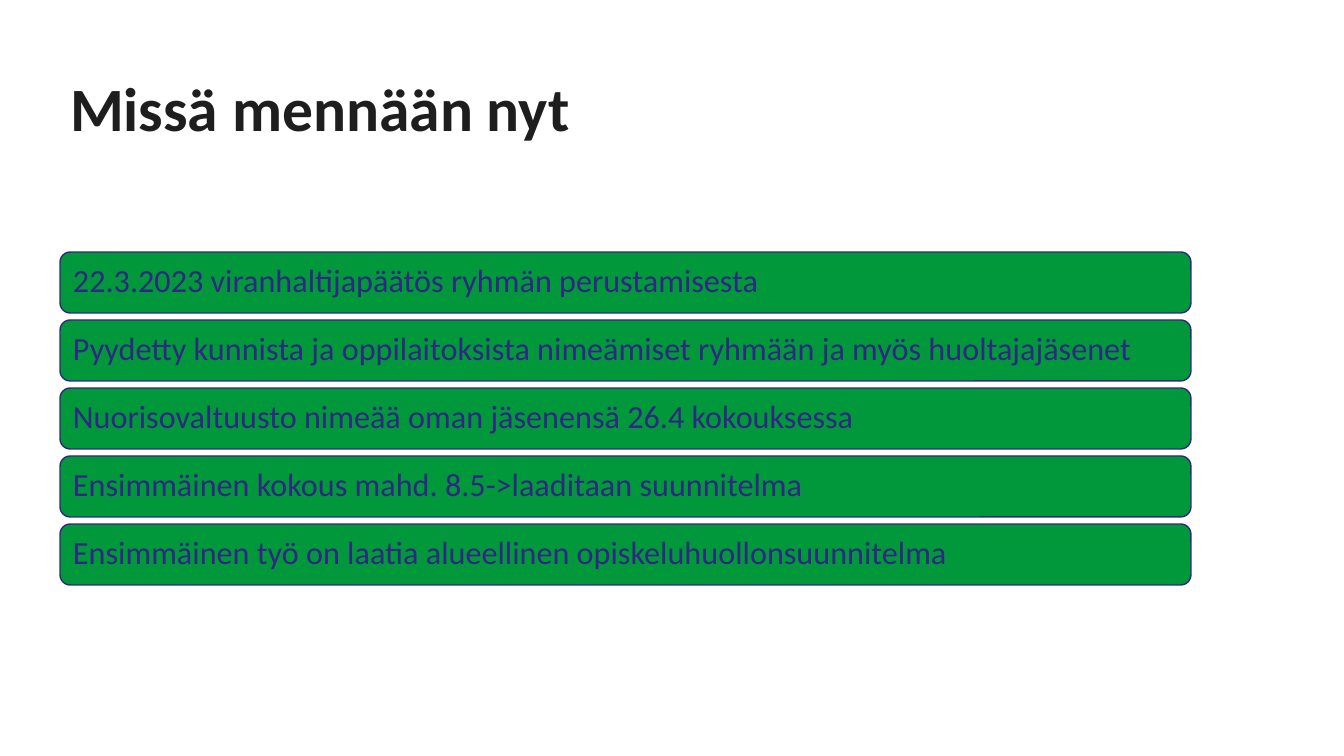
from pptx import Presentation
from pptx.dml.color import RGBColor
from pptx.enum.shapes import MSO_SHAPE
from pptx.enum.text import MSO_ANCHOR, PP_ALIGN
from pptx.util import Pt

PX = 914400 / 100.8
COLORS = {"title": "1E1E1E", "bar": "00983A", "ink": "302783"}
STEPS = [
    "22.3.2023 viranhaltijapäätös ryhmän perustamisesta",
    "Pyydetty kunnista ja oppilaitoksista nimeämiset ryhmään ja myös huoltajajäsenet",
    "Nuorisovaltuusto nimeää oman jäsenensä 26.4 kokouksessa",
    "Ensimmäinen kokous mahd. 8.5->laaditaan suunnitelma",
    "Ensimmäinen työ on laatia alueellinen opiskeluhuollonsuunnitelma",
]
LEFT, WIDTH = 60, 1131
BAR_TOP, BAR_HEIGHT, BAR_PITCH = 252, 61, 68


def px(n):
    return round(n * PX)


def write(sp, text, size, color, anchor, bold=False):
    tf = sp.text_frame
    tf.word_wrap = True
    tf.vertical_anchor = anchor
    tf.margin_left = tf.margin_right = px(10)
    tf.margin_top = tf.margin_bottom = px(5)
    p = tf.paragraphs[0]
    p.alignment = PP_ALIGN.LEFT
    p.line_spacing = 0.9
    r = p.add_run()
    r.text = text
    r.font.name = "Calibri"
    r.font.size = Pt(size)
    r.font.bold = bold
    r.font.color.rgb = RGBColor.from_string(COLORS[color])


prs = Presentation()
prs.slide_width = px(1344)
prs.slide_height = px(756)
s = prs.slides.add_slide(prs.slide_layouts[6])

title = s.shapes.add_textbox(px(LEFT), px(59), px(WIDTH), px(91))
write(title, "Missä mennään nyt", 44, "title", MSO_ANCHOR.BOTTOM, bold=True)

for i, step in enumerate(STEPS):
    sp = s.shapes.add_shape(
        MSO_SHAPE.ROUNDED_RECTANGLE,
        px(LEFT), px(BAR_TOP + i * BAR_PITCH), px(WIDTH), px(BAR_HEIGHT),
    )
    sp.shadow.inherit = False
    sp.fill.solid()
    sp.fill.fore_color.rgb = RGBColor.from_string(COLORS["bar"])
    sp.line.color.rgb = RGBColor.from_string(COLORS["ink"])
    sp.line.width = Pt(1)
    write(sp, step, 23, "ink", MSO_ANCHOR.MIDDLE)

prs.save("out.pptx")
